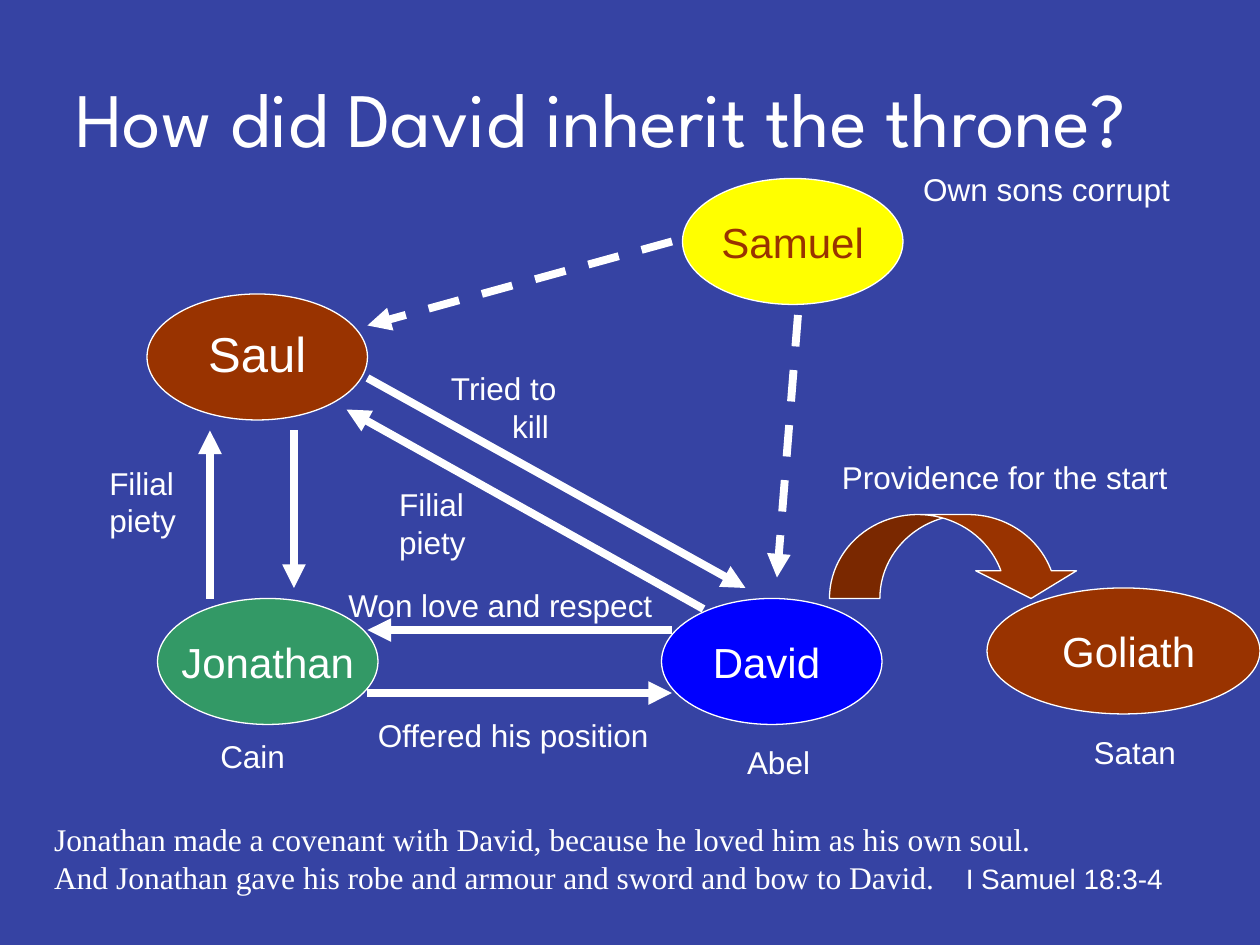
"""Build a slide showing how David inherited the throne."""
from lxml.etree import SubElement
from pptx import Presentation
from pptx.dml.color import RGBColor
from pptx.enum.dml import MSO_LINE
from pptx.enum.shapes import MSO_CONNECTOR, MSO_SHAPE
from pptx.enum.text import MSO_ANCHOR, PP_ALIGN
from pptx.oxml.ns import qn
from pptx.util import Pt

WHITE, BROWN = "FFFFFF", "993300"


def paint(color_format, color):
    color_format.rgb = RGBColor.from_string(color)


def add_label(lines, left, top, width, height, size=18, name="Arial", wrap=False):
    frame = slide.shapes.add_textbox(Pt(left), Pt(top), Pt(width), Pt(height)).text_frame
    frame.word_wrap = wrap
    frame.text = lines
    for paragraph in frame.paragraphs:
        paragraph.font.size = Pt(size)
        paragraph.font.name = name
        paint(paragraph.font.color, WHITE)
    return frame


presentation = Presentation()
presentation.slide_width, presentation.slide_height = Pt(720), Pt(540)
slide = presentation.slides.add_slide(presentation.slide_layouts[6])
slide.background.fill.solid()
paint(slide.background.fill.fore_color, "3643A3")

title = add_label("How did David inherit the throne?", 36, 21.6, 648, 90, 44, "League Spartan", True)
title.vertical_anchor = MSO_ANCHOR.MIDDLE

figures = [
    (MSO_SHAPE.OVAL, 84, 168, 126, 72, BROWN, "", WHITE),
    (MSO_SHAPE.OVAL, 90, 342, 126, 72, "339966", "Jonathan", WHITE),
    (MSO_SHAPE.OVAL, 378, 342, 126, 72, "0000FF", "", WHITE),
    (MSO_SHAPE.OVAL, 564, 336, 156, 72, BROWN, "", WHITE),
    (MSO_SHAPE.OVAL, 390, 102, 126, 72, "FFFF00", "Samuel", BROWN),
    (MSO_SHAPE.CURVED_DOWN_ARROW, 474, 294, 144, 48, BROWN, "", WHITE),
]
for kind, left, top, width, height, fill, name, color in figures:
    shape = slide.shapes.add_shape(kind, Pt(left), Pt(top), Pt(width), Pt(height))
    shape.shadow.inherit = False
    shape.fill.solid()
    paint(shape.fill.fore_color, fill)
    paint(shape.line.color, WHITE)
    shape.line.width = Pt(0.75)
    if kind == MSO_SHAPE.CURVED_DOWN_ARROW:
        for index, value in enumerate((0.6, 1.2, 0.33)):
            shape.adjustments[index] = value
    if name:
        frame = shape.text_frame
        frame.text = name
        frame.word_wrap = False
        frame.vertical_anchor = MSO_ANCHOR.MIDDLE
        paragraph = frame.paragraphs[0]
        paragraph.alignment = PP_ALIGN.CENTER
        paragraph.font.size = Pt(24)
        paragraph.font.name = "Arial"
        paint(paragraph.font.color, color)

arrows = [
    (456, 180, 444, 330, True),
    (384, 138, 210, 186, True),
    (384, 360, 210, 360, False),
    (210, 396, 384, 396, False),
    (120, 342, 120, 246, False),
    (168, 246, 168, 336, False),
    (210, 216, 426, 336, False),
    (402, 348, 198, 234, False),
]
for *ends, dashed in arrows:
    arrow = slide.shapes.add_connector(MSO_CONNECTOR.STRAIGHT, *map(Pt, ends))
    paint(arrow.line.color, WHITE)
    arrow.line.width = Pt(4.5)
    if dashed:
        arrow.line.dash_style = MSO_LINE.DASH
    SubElement(arrow.line._get_or_add_ln(), qn("a:tailEnd"), type="triangle")
    SubElement(arrow._element.spPr, qn("a:effectLst"))

names = [
    ("Saul", 108, 181.5, 78, 41, 28),
    ("David", 396, 360, 84, 36, 24),
    ("Goliath", 594, 354, 102, 36, 24),
]
for name, *place in names:
    frame = add_label(name, *place, wrap=True)
    frame.paragraphs[0].alignment = PP_ALIGN.CENTER

labels = [
    ("Own sons corrupt", 520.5, 93.6, 155.5),
    ("Providence for the start", 474, 258, 201),
    ("Won love and respect", 192, 331.2, 188.6),
    ("Offered his position", 208.8, 405.4, 170),
    ("Cain", 118.8, 417.6, 52),
    ("Abel", 419.8, 421.2, 50.4),
    ("Satan", 617.8, 415.4, 61.2),
]
for text, left, top, width in labels:
    add_label(text, left, top, width, 28.8)

for left, top in ((55.4, 261.4), (221, 273.6)):
    add_label("Filial\npiety", left, top, 52.6, 50.4)

attempt = add_label("Tried to\nkill", 250.6, 207.4, 80.6, 50.4)
attempt.paragraphs[1]._p.get_or_add_pPr().set("marL", str(Pt(35)))

verse = add_label(
    "Jonathan made a covenant with David, because he loved him as his own soul.\n"
    "And Jonathan gave his robe and armour and sword and bow to David.",
    23.8, 465.1, 657.4, 51.1, name="Times New Roman", wrap=True)
closing = verse.paragraphs[1]
properties = closing._p.get_or_add_pPr()
tabs = SubElement(properties, qn("a:tabLst"))
SubElement(tabs, qn("a:tab"), pos=str(Pt(521)), algn="l")
properties.insert(0, tabs)
reference = closing.add_run()
reference.text = "\tI Samuel 18:3-4"
reference.font.size = Pt(16)
reference.font.name = "Arial"

presentation.save("out.pptx")
